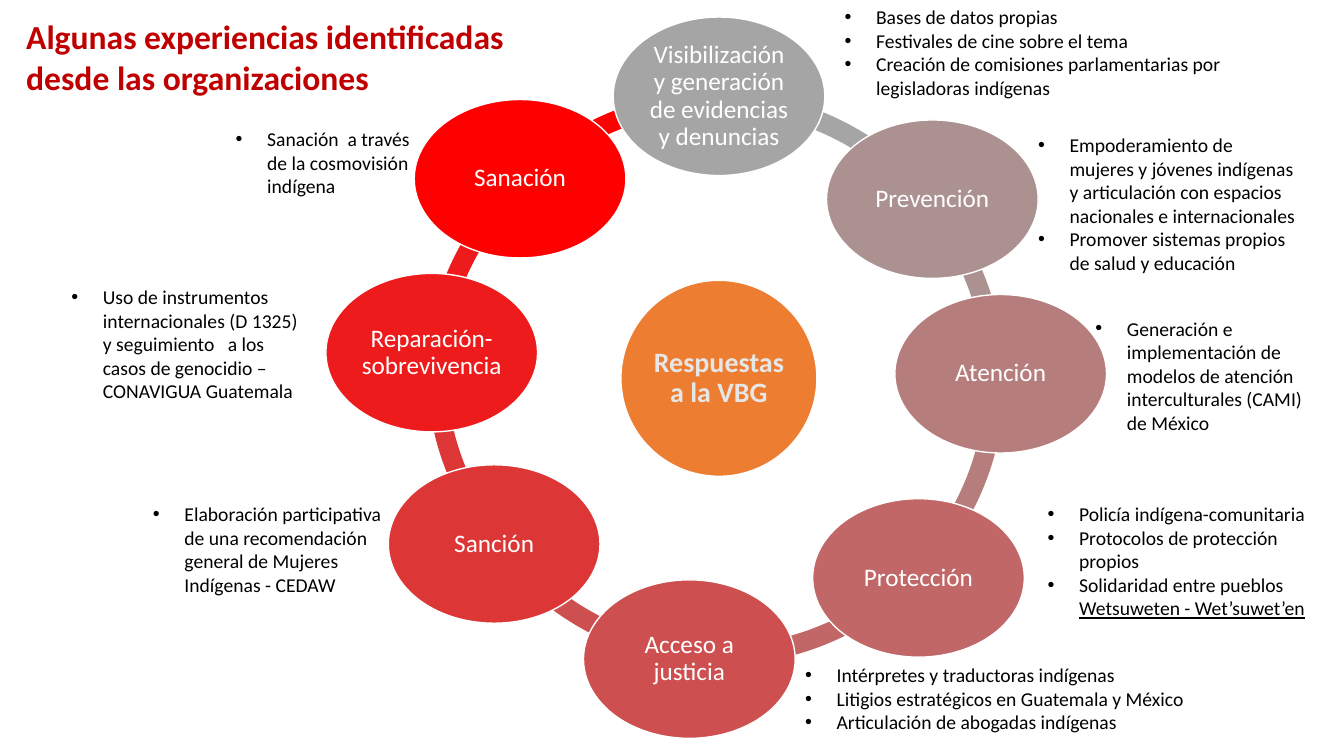
"""Build the slide on responses to gender violence as a ring of eight stages."""
from lxml import etree
from pptx import Presentation
from pptx.dml.color import RGBColor
from pptx.enum.shapes import MSO_SHAPE
from pptx.enum.text import MSO_ANCHOR, MSO_AUTO_SIZE, PP_ALIGN
from pptx.oxml.ns import qn
from pptx.util import Pt

ARC, OVAL = MSO_SHAPE.BLOCK_ARC, MSO_SHAPE.OVAL
TOP, MIDDLE = MSO_ANCHOR.TOP, MSO_ANCHOR.MIDDLE
LEFT, CENTER = PP_ALIGN.LEFT, PP_ALIGN.CENTER
NO_FIT = MSO_AUTO_SIZE.NONE

FONT = "Calibri"
WHITE = RGBColor(0xFF, 0xFF, 0xFF)
BLACK = RGBColor(0x00, 0x00, 0x00)
TITLE_RED = RGBColor(0xC0, 0x00, 0x00)
HUB_ORANGE = RGBColor(0xED, 0x7D, 0x31)
HUB_TEXT = RGBColor(0xE7, 0xE6, 0xE6)
GREY = RGBColor(0xA5, 0xA5, 0xA5)
ROSE_GREY = RGBColor(0xAC, 0x91, 0x91)
ROSE = RGBColor(0xB6, 0x7D, 0x7D)
DUSTY_RED = RGBColor(0xC1, 0x67, 0x67)
SOFT_RED = RGBColor(0xCE, 0x4F, 0x4F)
MID_RED = RGBColor(0xDD, 0x36, 0x36)
STRONG_RED = RGBColor(0xED, 0x1B, 0x1B)
PURE_RED = RGBColor(0xFE, 0x00, 0x00)

RING_SIZE, RING_THICKNESS = 409.7, 0.034
STAGE_W, STAGE_H = 151.2, 113.2
HUB_SIZE = 140
INDENT = 22.5

# name, colour, oval (left, top), arc (left, top, start, end)
STAGES = [
    ("Visibilización y generación de evidencias y denuncias", GREY,
     (438, 12.2), (305.3, 64.8, 162.53, 192.29)),
    ("Prevención", ROSE_GREY, (590.4, 85.7), (308.2, 68.4, 191.57, 214.93)),
    ("Atención", ROSE, (639.2, 210.4), (308.2, 65.5, 215.4, 26.89)),
    ("Protección", DUSTY_RED, (580.5, 356.2), (308.2, 65.5, 26.94, 57.62)),
    ("Acceso a justicia", SOFT_RED, (416.8, 414.2), (311, 65.5, 58.1, 86.51)),
    ("Sanción", MID_RED, (277.4, 332), (304.6, 56.9, 84.6, 109.69)),
    ("Reparación-sobrevivencia", STRONG_RED,
     (232.8, 195.3), (303.1, 69.8, 112, 136.27)),
    ("Sanación", PURE_RED, (295.9, 71.1), (308.9, 64.8, 135, 162)),
]

NOTES = [
    ((596.2, 0, 321.8, 75), [
        "Bases de datos propias",
        "Festivales de cine sobre el tema",
        "Creación de comisiones parlamentarias por legisladoras indígenas"]),
    ((734.4, 91.4, 202.3, 109), [
        "Empoderamiento de mujeres y jóvenes indígenas y articulación con "
        "espacios nacionales e internacionales",
        "Promover sistemas propios  de salud y educación"]),
    ((775.4, 222.5, 168.5, 92), [
        "Generación e implementación de modelos de atención interculturales "
        "(CAMI) de México"]),
    ((741.2, 355, 202.3, 92), [
        "Policía indígena-comunitaria",
        "Protocolos de protección  propios",
        "Solidaridad entre pueblos "]),
    ((568, 470.2, 306.7, 58.3), [
        "Intérpretes y traductoras indígenas",
        "Litigios estratégicos en Guatemala y México",
        "Articulación de abogadas indígenas"]),
    ((102.2, 355, 180, 75), [
        "Elaboración participativa de una recomendación general de Mujeres "
        "Indígenas - CEDAW"]),
    ((43.9, 200.2, 180, 92), [
        "Uso de instrumentos internacionales (D 1325) y seguimiento   a los "
        "casos de genocidio – CONAVIGUA Guatemala"]),
    ((161.3, 87.1, 139, 58.3), [
        "Sanación  a través de la cosmovisión indígena"]),
]
UNDERLINED = {"Solidaridad entre pueblos ": "Wetsuweten - Wet’suwet’en"}


def add_filled(kind, left, top, width, height, color):
    sp = s.shapes.add_shape(kind, Pt(left), Pt(top), Pt(width), Pt(height))
    sp.shadow.inherit = False
    sp.fill.solid()
    sp.fill.fore_color.rgb = color
    return sp


def style(p, size, color, bold=False, align=LEFT):
    p.alignment = align
    p.font.name = FONT
    p.font.size = Pt(size)
    p.font.bold = bold
    p.font.color.rgb = color


prs = Presentation()
prs.slide_width, prs.slide_height = Pt(960), Pt(540)
s = prs.slides.add_slide(prs.slide_layouts[5])

title = s.shapes.title
title.left, title.top, title.width, title.height = Pt(11.5), Pt(8), Pt(385.2), Pt(65.5)
tf = title.text_frame
tf.text = "Algunas experiencias identificadas desde las organizaciones"
tf.word_wrap, tf.auto_size, tf.vertical_anchor = True, NO_FIT, TOP
style(tf.paragraphs[0], 24, TITLE_RED, bold=True)

for name, color, oval, (left, top, start, end) in reversed(STAGES):
    sp = add_filled(ARC, left, top, RING_SIZE, RING_SIZE, color)
    sp.line.fill.background()
    for i, value in enumerate((start, end, RING_THICKNESS)):
        sp.adjustments[i] = value

ovals = [("Respuestas a la VBG", HUB_ORANGE, 443.5, 200.2, HUB_SIZE, HUB_SIZE,
          20, HUB_TEXT, True)]
for name, color, (left, top), arc in STAGES:
    ovals.append((name, color, left, top, STAGE_W, STAGE_H, 18, WHITE, False))

for name, color, left, top, width, height, size, text_color, bold in ovals:
    sp = add_filled(OVAL, left, top, width, height, color)
    sp.line.color.rgb = WHITE
    sp.line.width = Pt(1)
    tf = sp.text_frame
    tf.text = name
    tf.word_wrap, tf.vertical_anchor = True, MIDDLE
    tf.margin_left = tf.margin_right = tf.margin_top = tf.margin_bottom = Pt(1.6)
    p = tf.paragraphs[0]
    style(p, size, text_color, bold, CENTER)
    p.line_spacing = 0.9

for box, items in NOTES:
    tf = s.shapes.add_textbox(*map(Pt, box)).text_frame
    tf.word_wrap = True
    for i, item in enumerate(items):
        p = tf.add_paragraph() if i else tf.paragraphs[0]
        p.add_run().text = item
        if item in UNDERLINED:
            r = p.add_run()
            r.text = UNDERLINED[item]
            r.font.underline = True
        style(p, 14, BLACK)
        pPr = p._p.get_or_add_pPr()
        pPr.set("marL", str(Pt(INDENT)))
        pPr.set("indent", str(-Pt(INDENT)))
        bullet_font = etree.Element(qn("a:buFont"), typeface="Arial")
        bullet = etree.Element(qn("a:buChar"), char="•")
        pPr.insert(0, bullet_font)
        pPr.insert(1, bullet)

prs.save("out.pptx")
